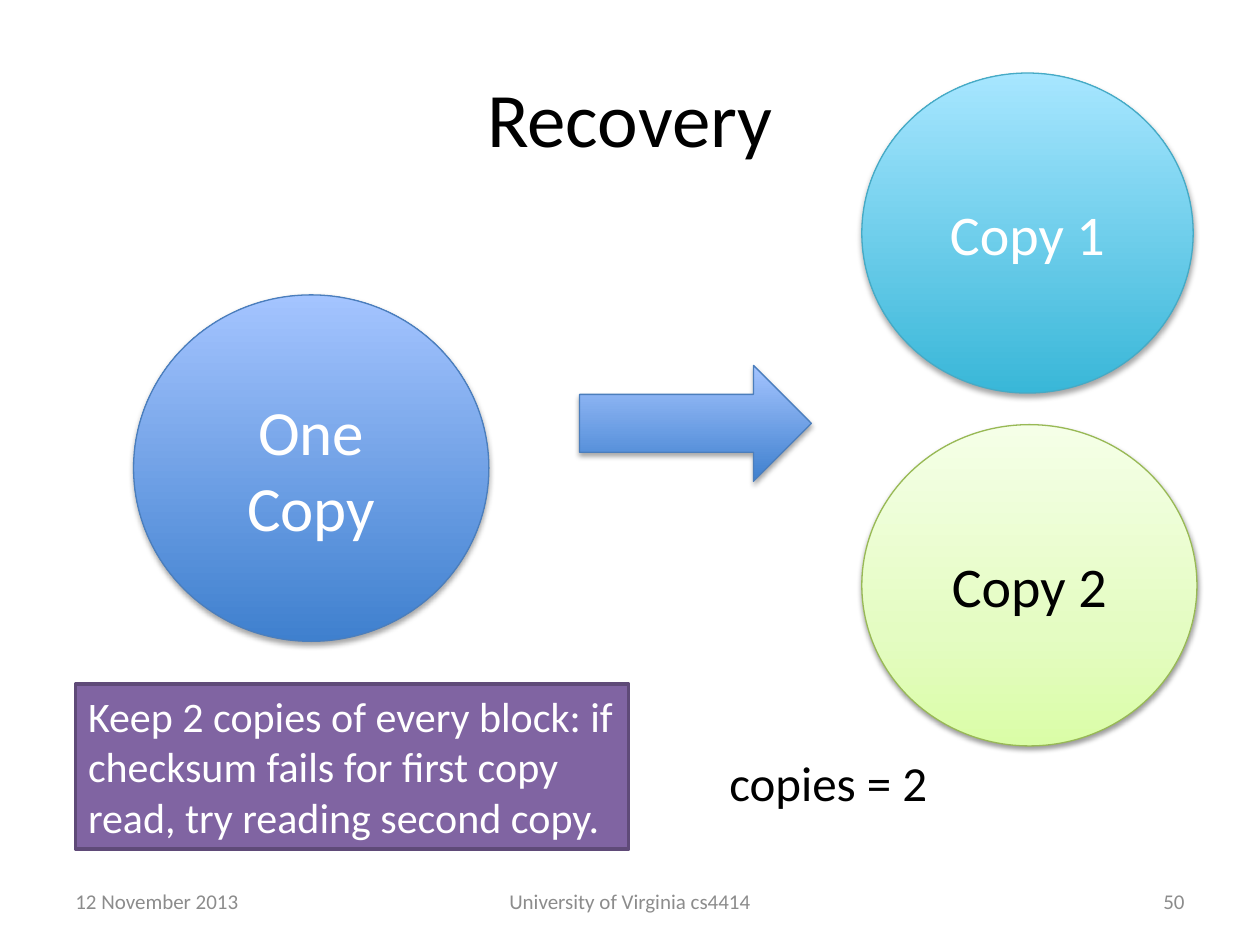
from dataclasses import dataclass

import pptx
import pptx.util
from lxml import etree
from pptx.dml.color import RGBColor
from pptx.enum.shapes import MSO_SHAPE
from pptx.enum.text import MSO_ANCHOR, PP_ALIGN
from pptx.oxml.ns import qn
from pptx.util import Inches


@dataclass(frozen=True)
class Theme:
    font: str = "Calibri"
    black: str = "000000"
    white: str = "FFFFFF"
    grey: str = "8C8C8C"
    purple: str = "8064A2"
    purple_line: str = "5F4A78"
    # Gradient stops run from bottom to top.
    blue: tuple = ((0, "3F80CE"), (100, "A4C4FF"))
    blue_line: str = "4B7EBC"
    aqua: tuple = ((0, "39B7D8"), (100, "A7E6FF"))
    aqua_line: str = "46AAC5"
    green: tuple = ((0, "DAFDA7"), (35, "E4FCC2"), (100, "F5FFE7"))
    green_line: str = "98B955"
    title: int = 44
    single: int = 36
    double: int = 32
    setting: int = 28
    note: int = 24
    footer: int = 12


T = Theme()


def rgb(color):
    return RGBColor.from_string(color)


def write(sp, text, size, color=T.black, align=PP_ALIGN.LEFT,
          anchor=MSO_ANCHOR.MIDDLE, wrap=True):
    tf = sp.text_frame
    tf.word_wrap = wrap
    tf.vertical_anchor = anchor
    p = tf.paragraphs[0]
    p.alignment = align
    r = p.add_run()
    r.text = text
    r.font.name = T.font
    r.font.size = pptx.util.Pt(size)
    r.font.color.rgb = rgb(color)


def add_label(s, box, text, size, **fmt):
    sp = s.shapes.add_textbox(*map(Inches, box))
    write(sp, text, size, **fmt)


def add_outlined(s, kind, box, line, width):
    sp = s.shapes.add_shape(kind, *map(Inches, box))
    sp.line.color.rgb = rgb(line)
    sp.line.width = pptx.util.Pt(width)
    sp.shadow.inherit = False
    return sp


def add_color(parent, color):
    return etree.SubElement(parent, qn("a:srgbClr"), val=color)


def add_glossy(s, kind, box, stops, line, alpha=35, distance=1.8):
    """Add a shape with a vertical gradient and a soft shadow below it."""
    sp = add_outlined(s, kind, box, line, 0.75)
    sp.fill.gradient()
    sp.fill.gradient_angle = 90
    spPr = sp._element.spPr
    gs_list = spPr.find(qn("a:gradFill")).find(qn("a:gsLst"))
    for gs in list(gs_list):
        gs_list.remove(gs)
    for pos, color in stops:
        add_color(etree.SubElement(gs_list, qn("a:gs"), pos=str(pos * 1000)), color)
    shadow = etree.SubElement(
        spPr.find(qn("a:effectLst")), qn("a:outerShdw"),
        blurRad=str(pptx.util.Pt(3.1)), dist=str(pptx.util.Pt(distance)),
        dir="5400000", rotWithShape="0")
    etree.SubElement(add_color(shadow, T.black), qn("a:alpha"), val=str(alpha * 1000))
    return sp


def add_diagram(s, left, top):
    """Place one copy, the arrow and the two copies it turns into."""
    circles = (
        ((0, 1.76, 2.82, 2.75), "One Copy", T.single, T.white, T.blue, T.blue_line, {}),
        ((5.78, 0, 2.63, 2.54), "Copy 1", T.double, T.white, T.aqua, T.aqua_line, {}),
        ((5.78, 2.79, 2.66, 2.55), "Copy 2", T.double, T.black, T.green, T.green_line,
         {"alpha": 38, "distance": 1.6}),
    )
    for (x, y, w, h), text, size, color, stops, line, shadow in circles:
        sp = add_glossy(s, MSO_SHAPE.OVAL, (left + x, top + y, w, h), stops, line, **shadow)
        write(sp, text, size, color=color, align=PP_ALIGN.CENTER)
    add_glossy(s, MSO_SHAPE.RIGHT_ARROW, (left + 3.54, top + 2.32, 1.84, 0.92),
               T.blue, T.blue_line)


def add_note(s, box):
    sp = add_outlined(s, MSO_SHAPE.RECTANGLE, box, T.purple_line, 2)
    sp.fill.solid()
    sp.fill.fore_color.rgb = rgb(T.purple)
    write(sp, "Keep 2 copies of every block: if checksum fails for first copy read, "
          "try reading second copy.", T.note, color=T.white, anchor=MSO_ANCHOR.TOP)


def add_footer(s, left, top, width, height):
    side, middle = 2.33, 3.17
    parts = (
        (0, side, "12 November 2013", PP_ALIGN.LEFT),
        ((width - middle) / 2, middle, "University of Virginia cs4414", PP_ALIGN.CENTER),
        (width - side, side, "50", PP_ALIGN.RIGHT),
    )
    for x, w, text, align in parts:
        add_label(s, (left + x, top, w, height), text, T.footer, color=T.grey, align=align)


def main():
    prs = pptx.Presentation()
    prs.slide_width, prs.slide_height = Inches(10), Inches(7.5)
    s = prs.slides.add_slide(prs.slide_layouts[6])
    add_label(s, (0.5, 0.3, 9, 1.25), "Recovery", T.title, align=PP_ALIGN.CENTER)
    add_footer(s, 0.5, 6.95, 9, 0.4)
    add_label(s, (5.69, 5.92, 1.79, 0.57), "copies = 2", T.setting,
              anchor=MSO_ANCHOR.TOP, wrap=False)
    add_diagram(s, 1.06, 0.58)
    add_note(s, (0.6, 5.43, 4.39, 1.31))
    prs.save("out.pptx")


if __name__ == "__main__":
    main()
